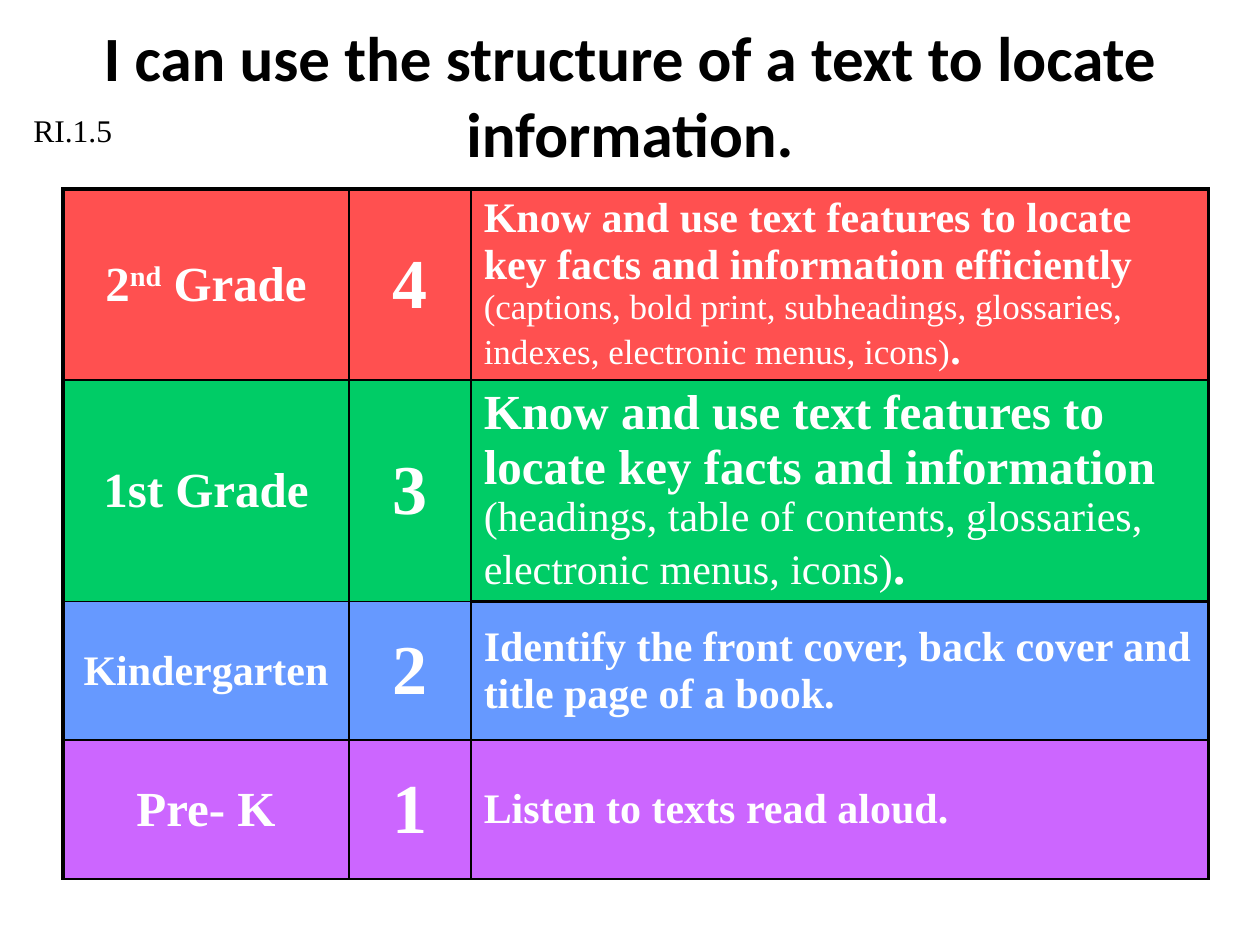
from dataclasses import dataclass

import pptx
import pptx.dml.color
import pptx.enum.text
import pptx.oxml
import pptx.oxml.ns
import pptx.util

COLORS = {
    "black": "000000",
    "white": "FFFFFF",
    "red": "FF5050",
    "green": "00CC66",
    "blue": "6699FF",
    "purple": "CC66FF",
}
SERIF = "Times New Roman"
CENTER = pptx.enum.text.PP_ALIGN.CENTER
LEFT = pptx.enum.text.PP_ALIGN.LEFT
MIDDLE = pptx.enum.text.MSO_ANCHOR.MIDDLE
SLIDE_WIDTH = pptx.util.Inches(10)
SLIDE_HEIGHT = pptx.util.Inches(7.5)

# Table grid, in inches, and line widths, in points
COLUMN_WIDTHS = (2.27, 0.97, 5.85)
OUTER, MEDIUM, THIN = 2.25, 1.5, 1


@dataclass
class Run:
    text: str
    size: float
    bold: bool = True
    baseline: int = 0


@dataclass
class Level:
    color: str
    height: float
    grade: list[Run]
    score: str
    skill: list[Run]


LEVELS = [
    Level("red", 1.51, [Run("2", 28), Run("nd", 28, baseline=30000), Run(" Grade", 28)], "4", [
        Run("Know and use text features to locate key facts and information efficiently ", 24),
        Run("(captions, bold print, subheadings, glossaries, indexes, electronic menus, icons)",
            20, bold=False),
        Run(".", 24),
    ]),
    Level("green", 1.75, [Run("1st Grade", 28)], "3", [
        Run("Know and use text features to locate key facts and information ", 28),
        Run("(headings, table of contents, glossaries, electronic menus, icons)", 24, bold=False),
        Run(".", 28),
    ]),
    Level("blue", 1.1, [Run("Kindergarten", 24)], "2", [
        Run("Identify the front cover, back cover and title page of a book.", 24),
    ]),
    Level("purple", 1.1, [Run("Pre- K", 28)], "1", [Run("Listen to texts read aloud.", 24)]),
]


def rgb(name: str) -> pptx.dml.color.RGBColor:
    return pptx.dml.color.RGBColor.from_string(COLORS[name])


def write(text_frame, runs: list[Run], *, font: str = SERIF, color: str = "black",
          align=LEFT) -> None:
    text_frame.word_wrap = True
    paragraph = text_frame.paragraphs[0]
    paragraph.alignment = align
    for item in runs:
        run = paragraph.add_run()
        run.text = item.text
        run.font.name = font
        run.font.size = pptx.util.Pt(item.size)
        run.font.bold = item.bold
        run.font.color.rgb = rgb(color)
        if item.baseline:
            run.font._element.set("baseline", str(item.baseline))


def place(shape, left: float, top: float, width: float, height: float) -> None:
    """Position a shape by shares of the slide's size."""
    shape.left, shape.width = int(SLIDE_WIDTH * left), int(SLIDE_WIDTH * width)
    shape.top, shape.height = int(SLIDE_HEIGHT * top), int(SLIDE_HEIGHT * height)


def set_borders(cell, widths: dict[str, float]) -> None:
    properties = cell._tc.get_or_add_tcPr()
    for index, (side, width) in enumerate(widths.items()):
        line = pptx.oxml.parse_xml(
            f'<a:ln{side} {pptx.oxml.ns.nsdecls("a")} w="{pptx.util.Pt(width)}">'
            f'<a:solidFill><a:srgbClr val="{COLORS["black"]}"/></a:solidFill></a:ln{side}>')
        properties.insert(index, line)


def border_widths(row: int, column: int) -> dict[str, float]:
    def rule_above(line: int) -> float:
        if line == 0:
            return OUTER
        return MEDIUM if line in (1, len(LEVELS)) or column == 2 else THIN

    return {
        "L": OUTER if column == 0 else THIN,
        "R": OUTER if column == len(COLUMN_WIDTHS) - 1 else THIN,
        "T": rule_above(row),
        "B": rule_above(row + 1),
    }


def add_levels(slide) -> None:
    frame = slide.shapes.add_table(
        len(LEVELS), len(COLUMN_WIDTHS), pptx.util.Inches(0.5), pptx.util.Inches(1.5),
        pptx.util.Inches(sum(COLUMN_WIDTHS)),
        pptx.util.Inches(sum(level.height for level in LEVELS)))
    table = frame.table
    table.first_row = table.horz_banding = False
    for column, width in zip(table.columns, COLUMN_WIDTHS):
        column.width = pptx.util.Inches(width)
    for row, level in enumerate(LEVELS):
        table.rows[row].height = pptx.util.Inches(level.height)
        contents = (level.grade, [Run(level.score, 40)], level.skill)
        for column, runs in enumerate(contents):
            cell = table.cell(row, column)
            cell.vertical_anchor = MIDDLE
            cell.fill.solid()
            cell.fill.fore_color.rgb = rgb(level.color)
            set_borders(cell, border_widths(row, column))
            write(cell.text_frame, runs, color="white", align=LEFT if column == 2 else CENTER)


def main() -> None:
    presentation = pptx.Presentation()
    presentation.slide_width, presentation.slide_height = SLIDE_WIDTH, SLIDE_HEIGHT
    slide = presentation.slides.add_slide(presentation.slide_layouts[5])

    # Learning goal
    title = slide.shapes.title
    place(title, 1 / 30, 1 / 30, 14 / 15, 2 / 15)
    title.text_frame.auto_size = pptx.enum.text.MSO_AUTO_SIZE.NONE
    title.text_frame.vertical_anchor = MIDDLE
    write(title.text_frame, [Run("I can use the structure of a text to locate information.", 36)],
          font="Calibri", align=CENTER)

    # Scale of grade levels
    add_levels(slide)

    # Standard code
    code = slide.shapes.add_textbox(0, 0, 0, 0)
    place(code, 1 / 60, 1 / 9, 0.14, 0.05)
    write(code.text_frame, [Run("RI.1.5", 18, bold=False)])

    presentation.save("out.pptx")


if __name__ == "__main__":
    main()
